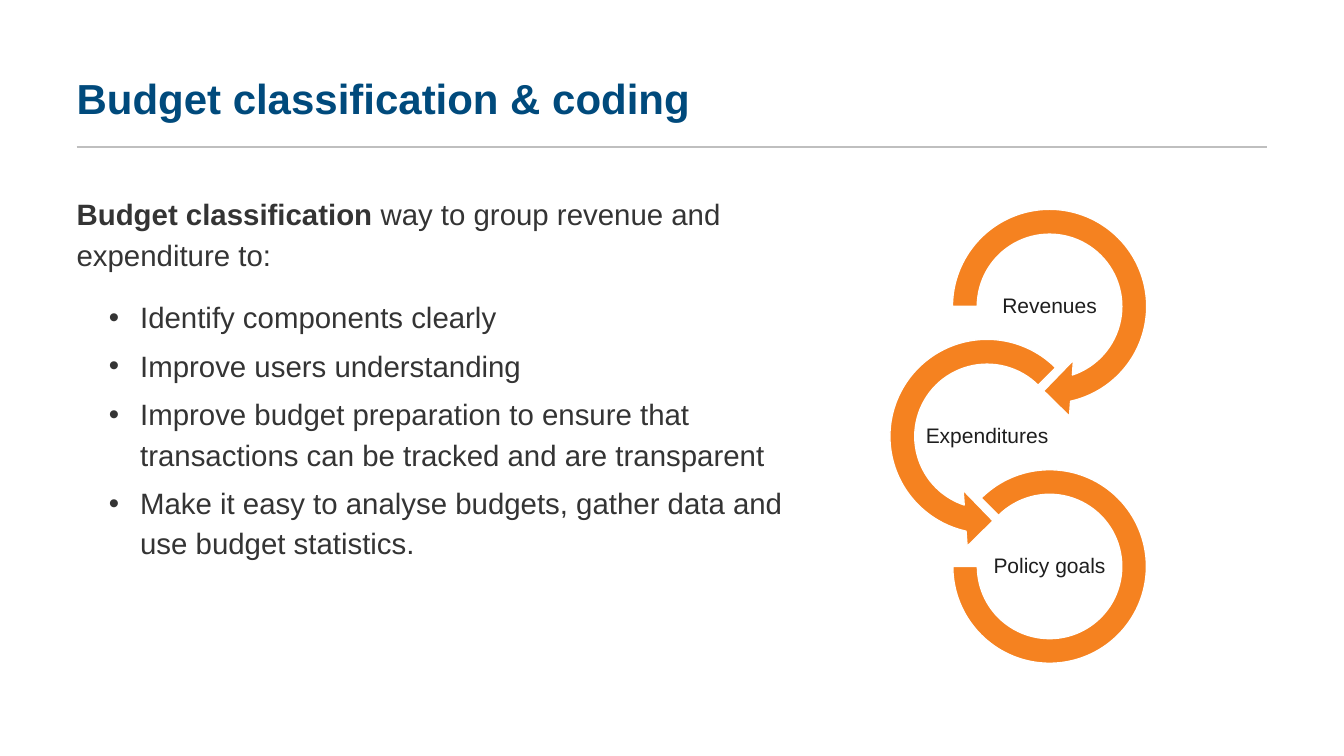
from lxml import etree
from pptx import Presentation
from pptx.dml.color import RGBColor
from pptx.enum import shapes, text
from pptx.oxml import ns
from pptx.util import Inches, Pt

COLORS = {
    "title": "004A7C",
    "body": "343434",
    "label": "1E1E1E",
    "ring": "F58220",
    "ring_edge": "FFFFFF",
    "rule": "BFBFBF",
}
FONT = "Arial"


def color(name):
    return RGBColor.from_string(COLORS[name])


def add_run(paragraph, words, *, size, tint, bold=False):
    run = paragraph.add_run()
    run.text = words
    run.font.name = FONT
    run.font.size = Pt(size)
    run.font.bold = bold
    run.font.color.rgb = color(tint)


def set_bullet(paragraph, char=None, margin=0, indent=0):
    props = paragraph._p.get_or_add_pPr()
    props.set("marL", str(Inches(margin)))
    props.set("indent", str(Inches(indent)))
    if char:
        etree.SubElement(props, ns.qn("a:buFont")).set("typeface", FONT)
        etree.SubElement(props, ns.qn("a:buChar")).set("char", char)
    else:
        etree.SubElement(props, ns.qn("a:buNone"))


class SlideBuilder:
    def __init__(self, slide):
        self.slide = slide
        self.cycle = slide.shapes.add_group_shape().shapes

    def place(self, holder, left, top, width, height, anchor):
        holder.left, holder.top = Inches(left), Inches(top)
        holder.width, holder.height = Inches(width), Inches(height)
        frame = holder.text_frame
        frame.auto_size = text.MSO_AUTO_SIZE.NONE
        frame.word_wrap = True
        frame.vertical_anchor = anchor
        return frame

    def title(self, words):
        frame = self.place(self.slide.shapes.title, 0.66, 0.46, 11.92, 0.82,
                           text.MSO_ANCHOR.BOTTOM)
        heading = frame.paragraphs[0]
        heading.alignment = text.PP_ALIGN.LEFT
        heading.line_spacing = 0.9
        add_run(heading, words, size=30, tint="title", bold=True)

    def body(self, term, meaning, purposes):
        frame = self.place(self.slide.placeholders[1], 0.66, 1.85, 7.66, 4.89,
                           text.MSO_ANCHOR.TOP)
        intro = frame.paragraphs[0]
        self.space(intro, after=10)
        set_bullet(intro)
        add_run(intro, term, size=21, tint="body", bold=True)
        add_run(intro, meaning, size=21, tint="body")
        for purpose in purposes:
            item = frame.add_paragraph()
            item.level = 3
            self.space(item, after=6 if purpose == purposes[-1] else 0)
            set_bullet(item, "•", 0.63, -0.31)
            add_run(item, purpose, size=21, tint="body")

    def space(self, paragraph, after):
        paragraph.line_spacing = 1.14
        paragraph.space_before = Pt(6)
        paragraph.space_after = Pt(after)

    def rule(self, left, right, top):
        line = self.slide.shapes.add_connector(
            shapes.MSO_CONNECTOR.STRAIGHT,
            Inches(left), Inches(top), Inches(right), Inches(top))
        line.line.color.rgb = color("rule")
        line.line.width = Pt(1.5)
        etree.SubElement(line._element.spPr, ns.qn("a:effectLst"))

    def ring(self, kind, left, top, size, adjustments):
        ring = self.cycle.add_shape(kind, Inches(left), Inches(top),
                                    Inches(size), Inches(size))
        for index, value in enumerate(adjustments):
            ring.adjustments[index] = value
        ring.shadow.inherit = False
        ring.fill.solid()
        ring.fill.fore_color.rgb = color("ring")
        ring.line.color.rgb = color("ring_edge")
        ring.line.width = Pt(1)

    def label(self, words, left, top):
        box = self.cycle.add_textbox(0, 0, 0, 0)
        frame = self.place(box, left, top, 1.24, 0.62, text.MSO_ANCHOR.MIDDLE)
        frame.margin_left = frame.margin_right = Inches(0.01)
        frame.margin_top = frame.margin_bottom = Inches(0.01)
        name = frame.paragraphs[0]
        name.alignment = text.PP_ALIGN.CENTER
        name.line_spacing = 0.9
        add_run(name, words, size=15, tint="label")


def main():
    deck = Presentation()
    deck.slide_width, deck.slide_height = Inches(13.33), Inches(7.5)
    builder = SlideBuilder(deck.slides.add_slide(deck.slide_layouts[1]))

    builder.rule(0.76, 12.57, 1.46)
    builder.title("Budget classification & coding")
    builder.body(
        "Budget classification ",
        "way to group revenue and expenditure to:",
        ["Identify components clearly",
         "Improve users understanding",
         "Improve budget preparation to ensure that transactions can be "
         "tracked and are transparent",
         "Make it easy to analyse budgets, gather data and use budget "
         "statistics."])

    kinds = shapes.MSO_SHAPE
    stages = [
        ("Revenues", kinds.CIRCULAR_ARROW, 9.29, 0,
         (0.11, 11.42, 45, 108, 0.125)),
        ("Expenditures", kinds.LEFT_CIRCULAR_ARROW, 8.67, 0,
         (0.11, 11.42, 63, 189, 0.125)),
        ("Policy goals", kinds.BLOCK_ARC, 9.29, 0.16, (135, 108, 0.127)),
    ]
    for step, (name, kind, left, inset, adjustments) in enumerate(stages):
        top = 1.92 + 1.29 * step
        builder.ring(kind, left + inset, top + inset, 2.24 - 2 * inset,
                     adjustments)
        builder.label(name, left + 0.5, top + 0.81)

    deck.save("out.pptx")


if __name__ == "__main__":
    main()
